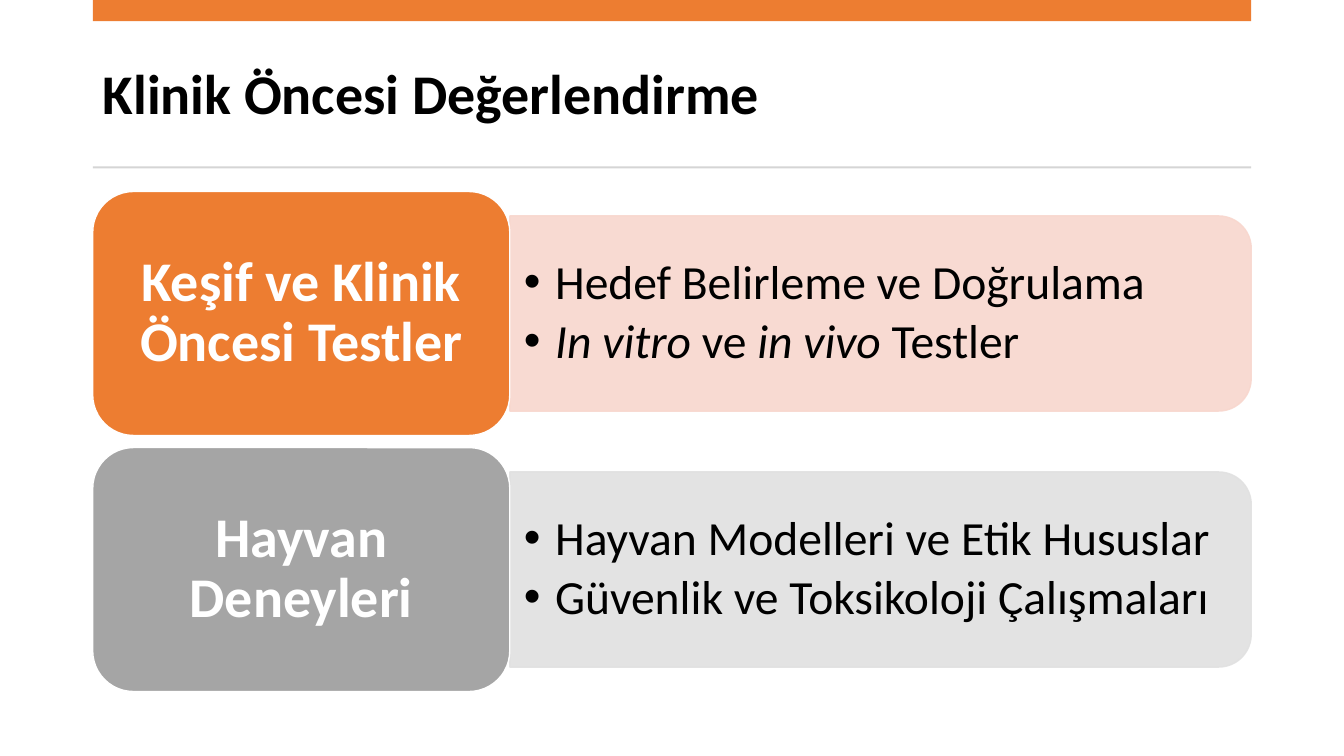
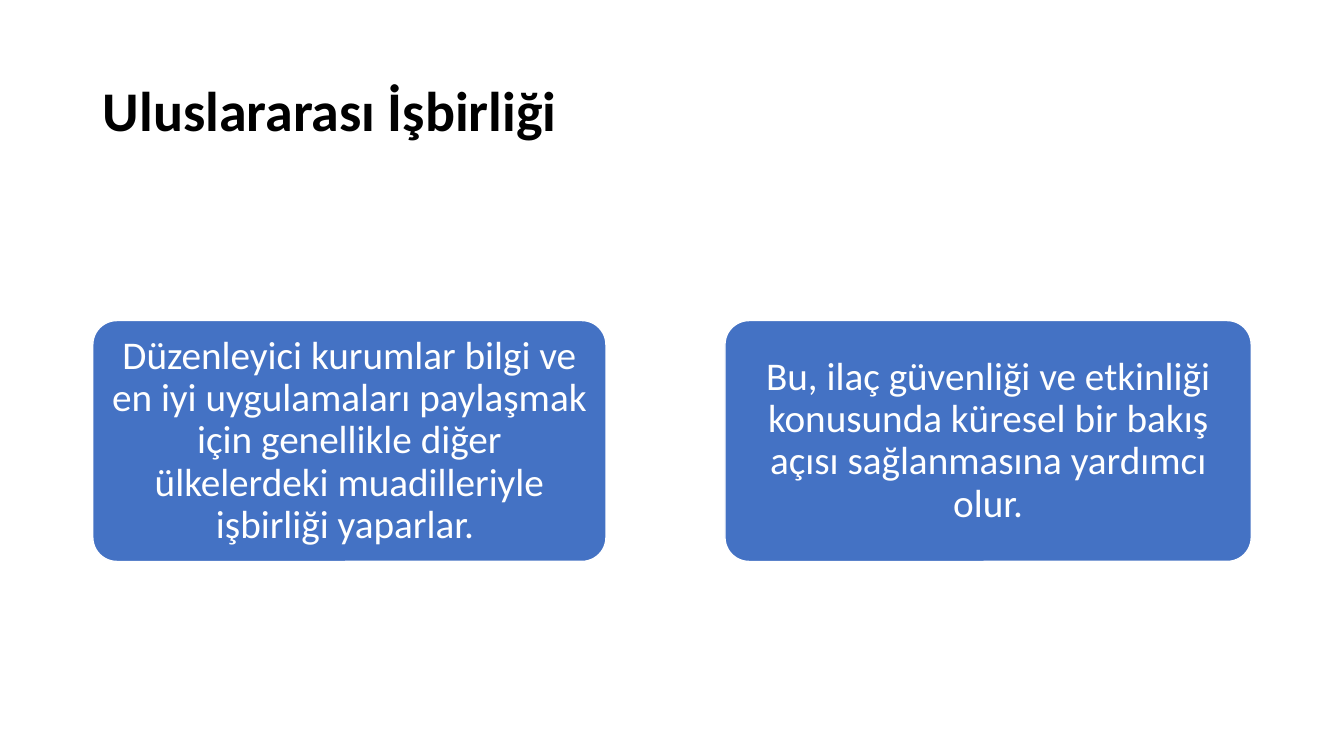
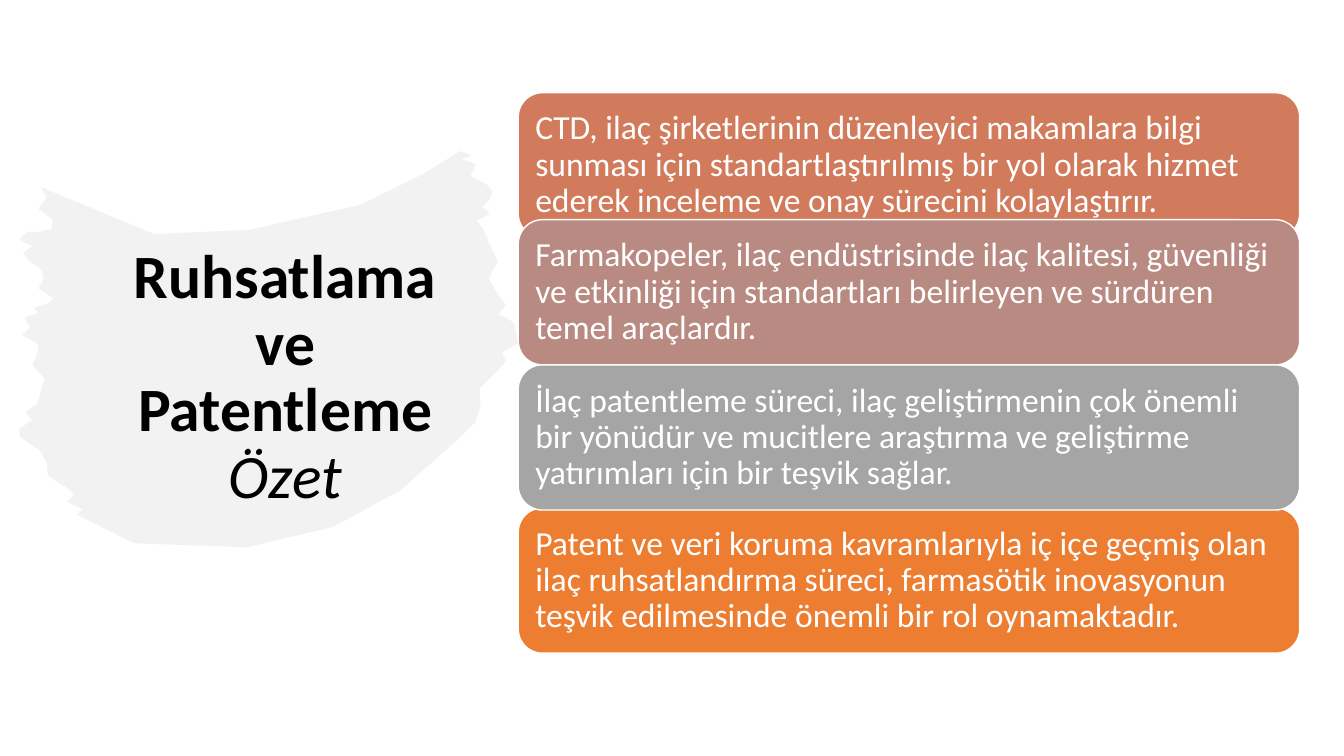
from dataclasses import dataclass
from itertools import cycle

from lxml.etree import SubElement
from pptx import Presentation
from pptx.dml.color import RGBColor
from pptx.enum.shapes import MSO_SHAPE as Preset
from pptx.enum.text import MSO_ANCHOR as Anchor, MSO_AUTO_SIZE as AutoSize, PP_ALIGN as Align
from pptx.oxml.ns import qn
from pptx.util import Inches, Pt


@dataclass(frozen=True)
class Theme:
    font: str = "Calibri"
    black: str = "000000"
    white: str = "FFFFFF"
    orange: str = "ED7D31"
    grey: str = "A5A5A5"
    blue: str = "4472C4"
    terracotta: str = "D17B5C"
    rose: str = "B98A82"
    pale_orange: str = "F8D7CE"
    pale_grey: str = "E1E1E1"
    rule: str = "D5D5D5"
    brush: str = "E7E6E6"
    title: int = 40
    big_title: int = 44
    bullet: int = 34
    card: int = 28
    summary: int = 24
    line_spacing: float = 0.9


THEME = Theme()
TITLE_ONLY, TWO_LISTS = 5, 3


@dataclass(frozen=True)
class Box:
    """An area on a grid of one-inch columns and rows."""
    left: float
    top: float
    width: float
    height: float

    def place(self, shape):
        shape.left, shape.top = Inches(self.left), Inches(self.top)
        shape.width, shape.height = Inches(self.width), Inches(self.height)

    def inner(self, left, top, width, height):
        return Box(self.left + left, self.top + top, width, height)

    def rows(self, count, gap):
        height = (self.height - gap * (count - 1)) / count
        return [self.inner(0, n * (height + gap), self.width, height) for n in range(count)]

    def centred(self, width, height):
        return self.inner((self.width - width) / 2, (self.height - height) / 2, width, height)


@dataclass(frozen=True)
class Span:
    text: str
    bold: bool | None = None
    italic: bool | None = None


SLIDE = Box(0, 0, 13.33, 7.5)
MARGIN, CONTENT_WIDTH = 0.92, 11.49

# Brush stroke edges, in hundredths of an inch from the corner of its box
BRUSH_RIGHT = [(439, 0), (453, 17), (468, 48), (461, 76), (476, 142), (494, 180), (475, 218), (437, 285)]
BRUSH_BOTTOM = [(380, 336), (314, 372), (230, 392), (120, 388)]
BRUSH_LEFT = [(64, 360), (55, 334), (8, 283), (25, 250), (25, 200), (12, 165), (40, 145),
              (16, 108), (15, 80), (38, 78), (29, 36)]
BRUSH_TOP = [(75, 55), (139, 82), (232, 78), (342, 53), (404, 22)]


# Shared drawing helpers
def paint(shape, fill, line=None, opacity=100):
    shape.shadow.inherit = False
    shape.fill.solid()
    shape.fill.fore_color.rgb = RGBColor.from_string(fill)
    if line:
        shape.line.color.rgb = RGBColor.from_string(line)
        shape.line.width = Pt(1)
    else:
        shape.line.fill.background()
    if opacity < 100:
        for colour in list(shape._element.spPr.iter(qn("a:srgbClr"))):
            SubElement(colour, qn("a:alpha"), val=str(opacity * 1000))


def add_shape(page, preset, box, fill, line=None, opacity=100):
    shape = page.shapes.add_shape(preset, *map(Inches, (box.left, box.top, box.width, box.height)))
    paint(shape, fill, line, opacity)
    return shape


def set_frame(frame, across=0.1, down=0.05):
    frame.word_wrap = True
    frame.auto_size = AutoSize.NONE
    frame.vertical_anchor = Anchor.MIDDLE
    frame.margin_left = frame.margin_right = Inches(across)
    frame.margin_top = frame.margin_bottom = Inches(down)


def write(para, spans, size, colour, align=Align.LEFT, bold=False):
    para.alignment = align
    para.line_spacing = THEME.line_spacing
    para.space_before = Pt(0)
    font = para.font
    font.name, font.size, font.bold = THEME.font, Pt(size), bold
    font.color.rgb = RGBColor.from_string(colour)
    for span in spans:
        run = para.add_run()
        run.text = span.text.rstrip("\n")
        if span.bold is not None:
            run.font.bold = span.bold
        if span.italic is not None:
            run.font.italic = span.italic
        if span.text.endswith("\n"):
            para.add_line_break()


def add_title(page, box, spans, size=THEME.title, align=Align.LEFT):
    title = page.shapes.title
    box.place(title)
    set_frame(title.text_frame)
    write(title.text_frame.paragraphs[0], spans, size, THEME.black, align, bold=True)


def add_card(page, box, fill, text, size, inset, align=Align.CENTER, bold=False, corner=None):
    card = add_shape(page, Preset.ROUNDED_RECTANGLE, box, fill, THEME.white)
    if corner is not None:
        card.adjustments[0] = corner
    set_frame(card.text_frame, *inset)
    write(card.text_frame.paragraphs[0], [Span(text)], size, THEME.white, align, bold)


# Regions
def add_header_bands(page):
    header = Box(MARGIN, 0, CONTENT_WIDTH, 1.67)
    add_shape(page, Preset.RECTANGLE, header.inner(0, 0, header.width, 0.21), THEME.orange)
    add_shape(page, Preset.RECTANGLE, header.inner(0, 1.65, header.width, 0.02), THEME.rule)


def fill_list(page, holder, box, items):
    box.place(holder)
    page.shapes._spTree.append(holder._element)  # bring in front of its panel
    frame = holder.text_frame
    set_frame(frame, 0.14, 0.07)
    for index, spans in enumerate(items):
        para = frame.add_paragraph() if index else frame.paragraphs[0]
        props = para._p.get_or_add_pPr()
        props.set("marL", str(Inches(0.31)))
        props.set("indent", str(Inches(-0.31)))
        SubElement(props, qn("a:buFont"), typeface="Arial")
        SubElement(props, qn("a:buChar"), char="•")
        write(para, spans, THEME.bullet, THEME.black)
        para.space_after = Pt(5)


def add_topic_row(page, holder, row, label, fill, pale, items):
    label_width = row.width * 0.36
    panel = row.inner(label_width, row.height * 0.1, row.width - label_width, row.height * 0.8)
    # The panel stands upright and is turned to round its right-hand corners
    upright = panel.centred(panel.height, panel.width)
    add_shape(page, Preset.ROUND_2_SAME_RECTANGLE, upright, pale, pale, 90).rotation = 90
    fill_list(page, holder, panel.inner(0, 0.1, panel.width - 0.09, panel.height - 0.2), items)
    label_box = row.inner(0, 0, label_width, row.height)
    add_card(page, label_box, fill, label, THEME.title, (0.17, 0.08), bold=True)


def roughen(edge, steps=4):
    """Split each stretch of an edge and push the new points in and out like bristles."""
    offsets = cycle((7, -5, 4, -8, 3))
    points = [edge[0]]
    for (x1, y1), (x2, y2) in zip(edge, edge[1:]):
        for step in range(1, steps):
            share = step / steps
            points.append((x1 + (x2 - x1) * share + next(offsets), y1 + (y2 - y1) * share))
        points.append((x2, y2))
    return points


def add_brush(page, box):
    outline = roughen(BRUSH_RIGHT) + BRUSH_BOTTOM + roughen(BRUSH_LEFT) + BRUSH_TOP
    builder = page.shapes.build_freeform(*outline[0], scale=Inches(0.01))
    builder.add_line_segments(outline[1:], close=True)
    brush = builder.convert_to_shape(Inches(box.left), Inches(box.top))
    box.place(brush)
    paint(brush, THEME.brush, opacity=50)
    page.shapes._spTree.insert(2, brush._element)  # send behind the title


# Slides
def build_preclinical(deck):
    page = deck.slides.add_slide(deck.slide_layouts[TWO_LISTS])
    add_title(page, Box(MARGIN, 0.37, CONTENT_WIDTH, 1.18), [Span("Klinik Öncesi Değerlendirme")])
    add_header_bands(page)
    topics = [
        ("Keşif ve Klinik Öncesi Testler", THEME.orange, THEME.pale_orange, [
            [Span("Hedef Belirleme ve Doğrulama")],
            [Span("In vitro ", italic=True), Span("ve "), Span("in vivo ", italic=True), Span("Testler")],
        ]),
        ("Hayvan Deneyleri", THEME.grey, THEME.pale_grey, [
            [Span("Hayvan Modelleri ve Etik Hususlar")],
            [Span("Güvenlik ve Toksikoloji Çalışmaları")],
        ]),
    ]
    holders = [holder for holder in page.placeholders if holder.placeholder_format.idx]
    rows = Box(MARGIN, 1.9, CONTENT_WIDTH, 4.96).rows(len(topics), gap=0.12)
    for holder, row, topic in zip(holders, rows, topics):
        add_topic_row(page, holder, row, *topic)


def build_cooperation(deck):
    page = deck.slides.add_slide(deck.slide_layouts[TITLE_ONLY])
    add_title(page, Box(MARGIN, 0.4, CONTENT_WIDTH, 1.45), [Span("Uluslararası İşbirliği")])
    band = Box(MARGIN, 3.18, CONTENT_WIDTH, 2.39)
    left_width, right_width = 5.09, 5.22
    cards = [
        (0, left_width, "Düzenleyici kurumlar bilgi ve en iyi uygulamaları paylaşmak için genellikle "
                        "diğer ülkelerdeki muadilleriyle işbirliği yaparlar. "),
        (band.width - right_width, right_width, "Bu, ilaç güvenliği ve etkinliği konusunda küresel bir "
                                                "bakış açısı sağlanmasına yardımcı olur."),
    ]
    for left, width, text in cards:
        add_card(page, band.inner(left, 0, width, band.height), THEME.blue, text,
                 THEME.card, (0.06, 0.04), corner=0.1)


def build_summary(deck):
    page = deck.slides.add_slide(deck.slide_layouts[TITLE_ONLY])
    add_brush(page, Box(0.19, 1.5, 4.95, 3.93))
    add_title(page, Box(MARGIN, 0.75, 3.82, 6.01),
              [Span("Ruhsatlama ve Patentleme\n"), Span("Özet", bold=False, italic=True)],
              THEME.big_title, Align.CENTER)
    stack = Box(5.14, 0.92, 7.75, 5.56)
    # The last card lies lowest, the others overlap downwards
    cards = [
        (4.12, THEME.orange, "Patent ve veri koruma kavramlarıyla iç içe geçmiş olan ilaç ruhsatlandırma "
                             "süreci, farmasötik inovasyonun teşvik edilmesinde önemli bir rol oynamaktadır."),
        (0, THEME.terracotta, "CTD, ilaç şirketlerinin düzenleyici makamlara bilgi sunması için "
                              "standartlaştırılmış bir yol olarak hizmet ederek inceleme ve onay sürecini "
                              "kolaylaştırır."),
        (1.26, THEME.rose, "Farmakopeler, ilaç endüstrisinde ilaç kalitesi, güvenliği ve etkinliği için "
                           "standartları belirleyen ve sürdüren temel araçlardır."),
        (2.7, THEME.grey, "İlaç patentleme süreci, ilaç geliştirmenin çok önemli bir yönüdür ve mucitlere "
                          "araştırma ve geliştirme yatırımları için bir teşvik sağlar."),
    ]
    for top, fill, text in cards:
        add_card(page, stack.inner(0, top, stack.width, 1.44), fill, text,
                 THEME.summary, (0.1, 0.1), Align.LEFT)


def main():
    deck = Presentation()
    deck.slide_width, deck.slide_height = Inches(SLIDE.width), Inches(SLIDE.height)
    for build in (build_preclinical, build_cooperation, build_summary):
        build(deck)
    deck.save("out.pptx")


if __name__ == "__main__":
    main()
